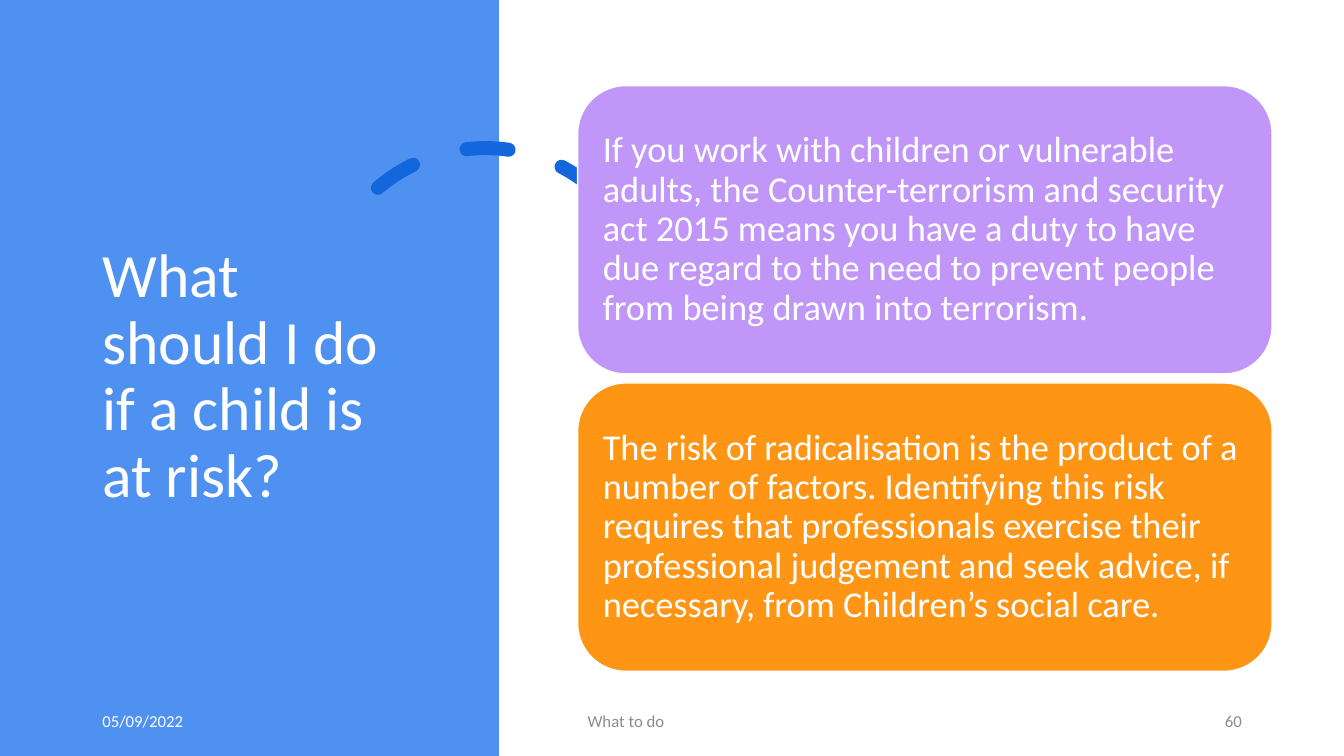
from dataclasses import dataclass

from lxml.etree import SubElement
from pptx import Presentation
from pptx.dml.color import RGBColor
from pptx.enum.dml import MSO_LINE
from pptx.enum.shapes import MSO_SHAPE
from pptx.enum.text import MSO_ANCHOR, MSO_AUTO_SIZE, PP_ALIGN
from pptx.oxml.ns import qn
from pptx.util import Pt


@dataclass(frozen=True)
class Theme:
    font: str = "Calibri"
    white: str = "FFFFFF"
    panel: str = "4E91F0"
    arc: str = "1366DC"
    muted: str = "8C8C8C"
    title_size: int = 44
    card_size: int = 26
    footer_size: int = 12


THEME = Theme()

# Content
TITLE = "What should I do if a child is at risk?"
CARDS = [
    ("If you work with children or vulnerable adults, the Counter-terrorism and "
     "security act 2015 means you have a duty to have due regard to the need to "
     "prevent people from being drawn into terrorism.", "C097F8"),
    ("The risk of radicalisation is the product of a number of factors. "
     "Identifying this risk requires that professionals exercise their "
     "professional judgement and seek advice, if necessary, from Children’s "
     "social care.", "FF9514"),
]
# Text, left, width, colour, alignment
FOOTERS = [
    ("05/09/2022", 66, 216, THEME.white, PP_ALIGN.LEFT),
    ("What to do", 412.6, 334, THEME.muted, PP_ALIGN.LEFT),
    ("60", 761, 133.2, THEME.muted, PP_ALIGN.RIGHT),
]

# Layout, in points
SLIDE_WIDTH, SLIDE_HEIGHT = 960, 540
PANEL_WIDTH = 356.4
TITLE_BOX = (66, 50.4, 232.6, 438.5)
ARC_BOX = (229, 105.8, 235.4, 235.4)
CARD_LEFT, CARD_TOP, CARD_WIDTH, CARD_HEIGHT = 412.6, 61.2, 496.1, 205.9
CARD_GAP = 6.5
CARD_INSET = 7.9
FOOTER_TOP, FOOTER_HEIGHT = 500.4, 28.8


def points(box):
    return [Pt(value) for value in box]


def set_all(target, values):
    for name, value in values.items():
        setattr(target, name, value)


def write(shape, text, size, color, align=PP_ALIGN.LEFT, line_spacing=1.0, inset=None):
    frame = shape.text_frame
    frame.text = text
    set_all(frame, {"word_wrap": True, "auto_size": MSO_AUTO_SIZE.NONE,
                    "vertical_anchor": MSO_ANCHOR.MIDDLE})
    if inset is not None:
        for side in ("left", "top", "right", "bottom"):
            setattr(frame, f"margin_{side}", Pt(inset))
    paragraph = frame.paragraphs[0]
    set_all(paragraph, {"alignment": align, "line_spacing": line_spacing})
    font = paragraph.runs[0].font
    set_all(font, {"name": THEME.font, "size": Pt(size)})
    font.color.rgb = RGBColor.from_string(color)


def add_block(slide, kind, box, fill):
    shape = slide.shapes.add_shape(kind, *points(box))
    shape.shadow.inherit = False
    shape.fill.solid()
    shape.fill.fore_color.rgb = RGBColor.from_string(fill)
    shape.line.fill.background()
    return shape


def add_dashed_arc(slide):
    shape = slide.shapes.add_shape(MSO_SHAPE.ARC, *points(ARC_BOX))
    shape.shadow.inherit = False
    shape.rotation = 345.8
    shape.adjustments[0], shape.adjustments[1] = 146.13, 0
    shape.fill.background()
    shape.line.color.rgb = RGBColor.from_string(THEME.arc)
    set_all(shape.line, {"width": Pt(10), "dash_style": MSO_LINE.DASH})
    line = shape.line._get_or_add_ln()
    line.set("cap", "rnd")
    SubElement(line, qn("a:round"))


def main():
    presentation = Presentation()
    set_all(presentation, {"slide_width": Pt(SLIDE_WIDTH), "slide_height": Pt(SLIDE_HEIGHT)})
    slide = presentation.slides.add_slide(presentation.slide_layouts[5])

    # Left panel and arc
    panel = add_block(slide, MSO_SHAPE.RECTANGLE, (0, 0, PANEL_WIDTH, SLIDE_HEIGHT), THEME.panel)
    add_dashed_arc(slide)

    # Title, in front of the panel
    title = slide.shapes.title
    set_all(title, dict(zip(("left", "top", "width", "height"), points(TITLE_BOX))))
    write(title, TITLE, THEME.title_size, THEME.white, line_spacing=0.9)
    title.element.addprevious(panel.element)

    # Footer row
    for text, left, width, color, align in FOOTERS:
        box = (left, FOOTER_TOP, width, FOOTER_HEIGHT)
        write(slide.shapes.add_textbox(*points(box)), text, THEME.footer_size, color, align)

    # Stacked cards
    for index, (text, fill) in enumerate(CARDS):
        top = CARD_TOP + index * (CARD_HEIGHT + CARD_GAP)
        card = add_block(slide, MSO_SHAPE.ROUNDED_RECTANGLE,
                         (CARD_LEFT, top, CARD_WIDTH, CARD_HEIGHT), fill)
        card.line.color.rgb = RGBColor.from_string(THEME.white)
        card.line.width = Pt(1)
        write(card, text, THEME.card_size, THEME.white, line_spacing=0.9, inset=CARD_INSET)

    presentation.save("out.pptx")


if __name__ == "__main__":
    main()
